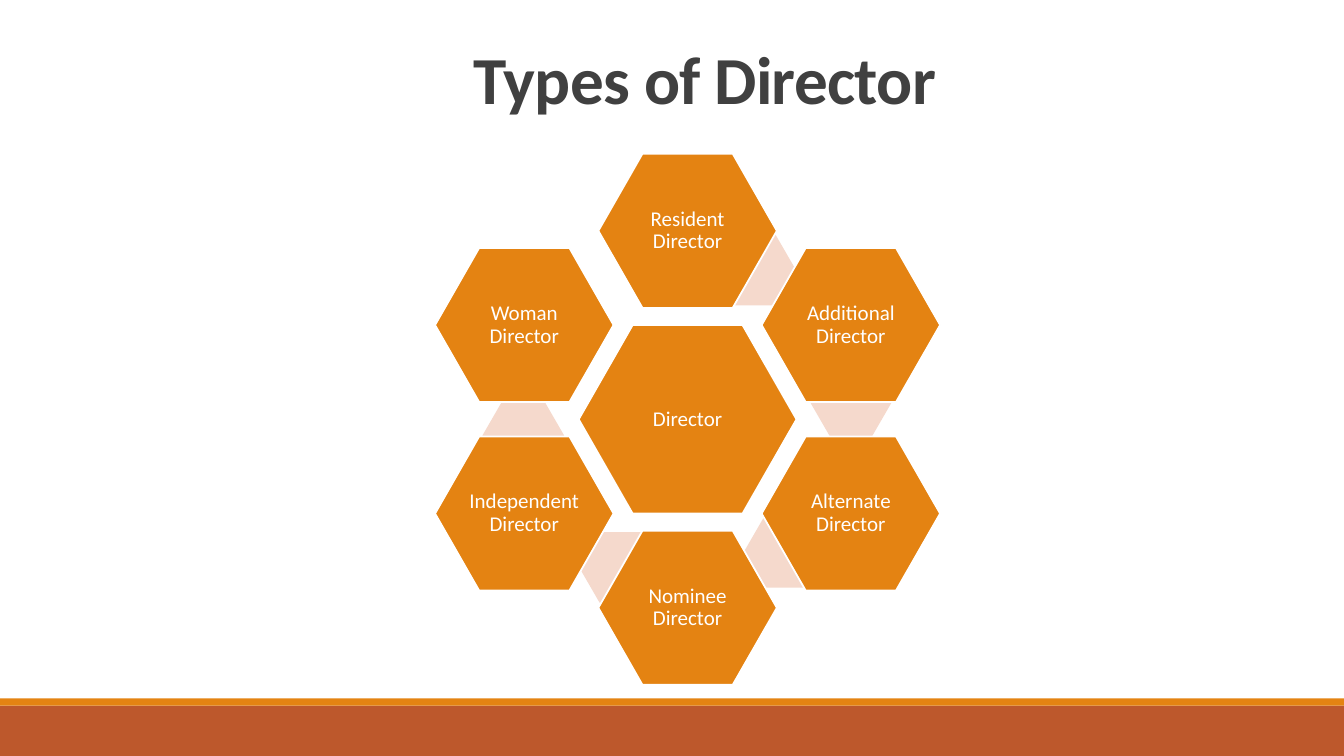
from math import cos, radians, sin

from pptx import Presentation
from pptx.dml.color import RGBColor
from pptx.enum.shapes import MSO_SHAPE as Shape
from pptx.enum.text import MSO_ANCHOR as Anchor, MSO_AUTO_SIZE as Fit, PP_ALIGN as Align
from pptx.util import Inches, Pt

# Content
TITLE = "Types of Director"
HUB = "Director"
# Each outer role, with the offset of its pale link from the hub centre
ROLES = [
    ("Resident Director", (0.67, -1.48)),
    ("Additional Director", (1.62, -0.17)),
    ("Alternate Director", (0.96, 1.32)),
    ("Nominee Director", (-0.67, 1.47)),
    ("Independent Director", (-1.63, 0.16)),
    ("Woman Director", None),
]

# Look
FONT = "Calibri"
ORANGE, RUST, PALE, WHITE, DARK = "E48312", "BD582C", "F5D9CC", "FFFFFF", "404040"
WIDE, HIGH = 13.33, 7.5
MID_X, MID_Y, RING = 6.82, 4.16, 1.87
HUB_SIZE, ROLE_SIZE, LINK_SIZE = (2.16, 1.87), (1.77, 1.53), (0.81, 0.7)


def color(code):
    return RGBColor.from_string(code)


def block(kind, left, top, width, height, fill):
    part = slide.shapes.add_shape(
        kind, Inches(left), Inches(top), Inches(width), Inches(height))
    part.shadow.inherit = False
    part.fill.solid()
    part.fill.fore_color.rgb = color(fill)
    part.line.fill.background()
    return part


def write(frame, text, size, tint, spacing):
    frame.text = text
    frame.word_wrap = True
    line = frame.paragraphs[0]
    line.alignment = Align.CENTER
    line.line_spacing = spacing
    run = line.runs[0]
    run.font.name = FONT
    run.font.size = Pt(size)
    run.font.color.rgb = color(tint)
    return run


def hexagon(dx, dy, size, fill, adjust):
    width, height = size
    part = block(Shape.HEXAGON, MID_X + dx - width / 2, MID_Y + dy - height / 2,
                 width, height, fill)
    part.adjustments[0] = adjust
    return part


def role(dx, dy, size, text):
    part = hexagon(dx, dy, size, ORANGE, 0.286)
    part.line.color.rgb = color(WHITE)
    part.line.width = Pt(1.25)
    frame = part.text_frame
    frame.margin_left = frame.margin_right = Inches(0.02)
    frame.margin_top = frame.margin_bottom = Inches(0.02)
    frame.vertical_anchor = Anchor.MIDDLE
    write(frame, text, 15, WHITE, 0.9)


deck = Presentation()
deck.slide_width, deck.slide_height = Inches(WIDE), Inches(HIGH)
slide = deck.slides.add_slide(deck.slide_layouts[5])

# Footer bands
block(Shape.RECTANGLE, 0, 7, WIDE, 0.5, RUST)
block(Shape.RECTANGLE, 0, 6.93, WIDE, 0.07, ORANGE)

# Title
title = slide.shapes.title
title.left, title.top = Inches(1.49), Inches(0.4)
title.width, title.height = Inches(11), Inches(0.82)
title.text_frame.auto_size = Fit.NONE
title.text_frame.vertical_anchor = Anchor.BOTTOM
head = write(title.text_frame, TITLE, 48, DARK, 0.85)
head.font.bold = True
head.font._element.set("spc", "-50")

# Hub, then the ring clockwise from the top, each link behind its role
role(0, 0, HUB_SIZE, HUB)
for i, (name, link) in enumerate(ROLES):
    if link:
        hexagon(*link, LINK_SIZE, PALE, 0.289)
    turn = radians(i * 360 / len(ROLES))
    role(RING * sin(turn), -RING * cos(turn), ROLE_SIZE, name)

deck.save("out.pptx")
